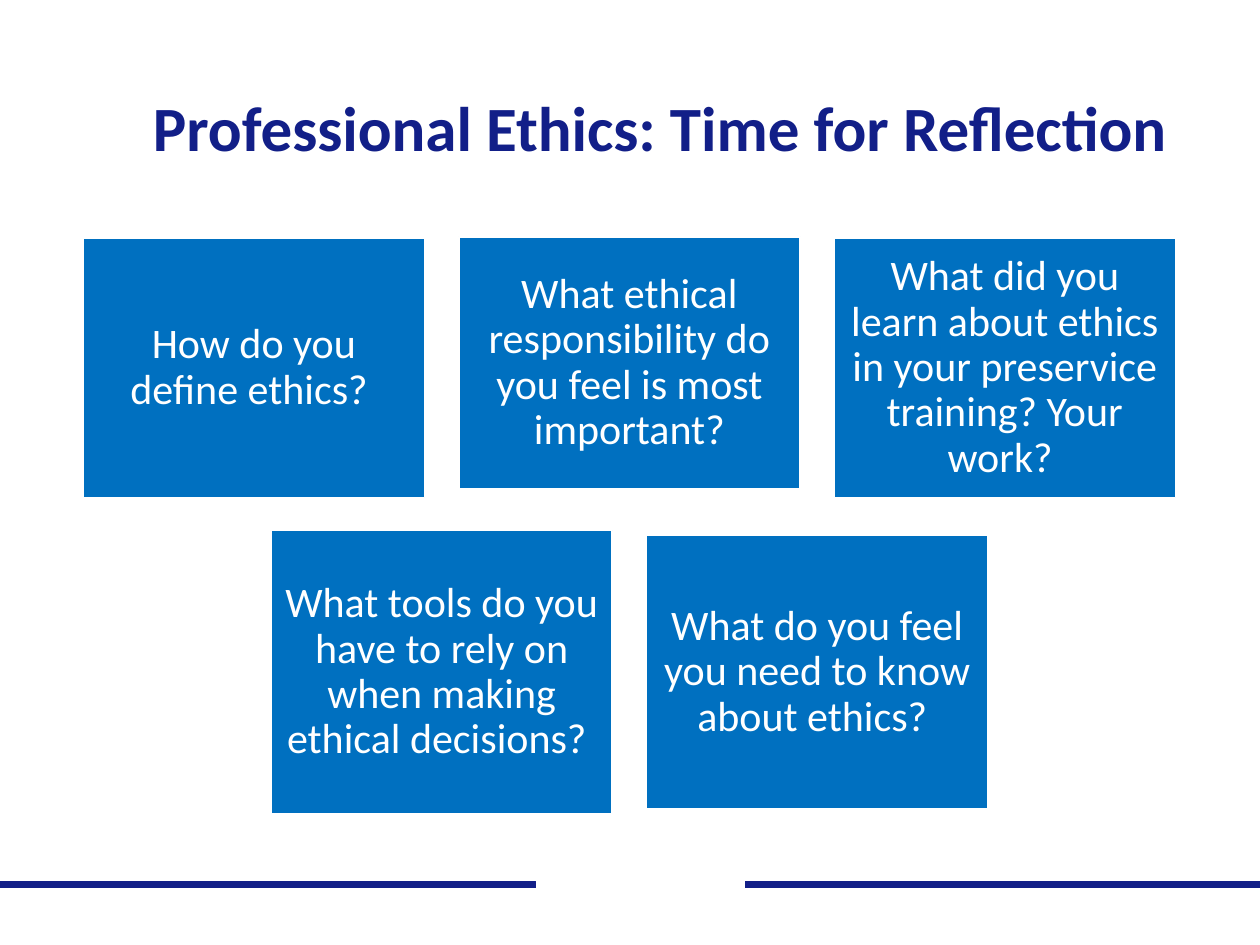
from lxml.etree import SubElement
from pptx import Presentation
from pptx.dml.color import RGBColor
from pptx.enum.shapes import MSO_CONNECTOR, MSO_SHAPE
from pptx.enum.text import MSO_ANCHOR, PP_ALIGN
from pptx.oxml.ns import qn
from pptx.util import Inches, Pt

NAVY, BLUE, WHITE = "121F88", "0070C0", "FFFFFF"
CARD_WIDTH, CARD_STEP = 2.71, 2.98
TOP_ROW = [
    ("How do you define ethics? ", 1.89, 2.06),
    ("What ethical responsibility do you feel is most important?", 1.88, 2),
    ("What did you learn about ethics in your preservice training? Your work? ", 1.89, 2.06),
]
BOTTOM_ROW = [
    ("What tools do you have to rely on when making ethical decisions? ", 4.21, 2.25),
    ("What do you feel you need to know about ethics? ", 4.25, 2.17),
]


def color(value):
    return RGBColor.from_string(value)


def write_text(shape, text, size, tint, bold=False):
    frame = shape.text_frame
    frame.word_wrap = True
    frame.vertical_anchor = MSO_ANCHOR.MIDDLE
    frame.text = text
    para = frame.paragraphs[0]
    para.alignment = PP_ALIGN.CENTER
    para.line_spacing = 0.9
    font = para.runs[0].font
    font.name, font.size, font.bold = "Calibri", Pt(size), bold
    font.color.rgb = color(tint)


def add_title(page, left, top, width, height):
    box = page.shapes.add_textbox(Inches(left), Inches(top), Inches(width), Inches(height))
    write_text(box, "Professional Ethics: Time for Reflection", 36, NAVY, True)


def add_rule(page, start, end, top, tint):
    rule = page.shapes.add_connector(
        MSO_CONNECTOR.STRAIGHT, Inches(start), Inches(top), Inches(end), Inches(top))
    rule.line.color.rgb = color(tint)
    rule.line.width = Pt(4.5)
    SubElement(rule._element.spPr, qn("a:effectLst"))


def add_footer(page, left, top, width):
    add_rule(page, left, left + width, top, NAVY)
    add_rule(page, left + 4.25, left + 5.91, top, WHITE)


def add_card(page, text, left, top, width, height):
    card = page.shapes.add_shape(
        MSO_SHAPE.RECTANGLE, Inches(left), Inches(top), Inches(width), Inches(height))
    card.shadow.inherit = False
    card.fill.solid()
    card.fill.fore_color.rgb = color(BLUE)
    card.line.color.rgb = color(WHITE)
    card.line.width = Pt(1)
    frame = card.text_frame
    frame.margin_left = frame.margin_right = Inches(0.1)
    frame.margin_top = frame.margin_bottom = Inches(0.1)
    write_text(card, text, 24, WHITE)


def add_row(page, cards, left):
    for index, (text, top, height) in enumerate(cards):
        add_card(page, text, left + index * CARD_STEP, top, CARD_WIDTH, height)


def main():
    deck = Presentation()
    deck.slide_width, deck.slide_height = Inches(10), Inches(7.5)
    page = deck.slides.add_slide(deck.slide_layouts[6])
    add_footer(page, 0, 7.02, 10)
    add_title(page, 1.06, 0.21, 8.36, 1.66)
    add_row(page, TOP_ROW, 0.66)
    add_row(page, BOTTOM_ROW, 0.66 + CARD_STEP / 2)
    deck.save("out.pptx")


if __name__ == "__main__":
    main()
